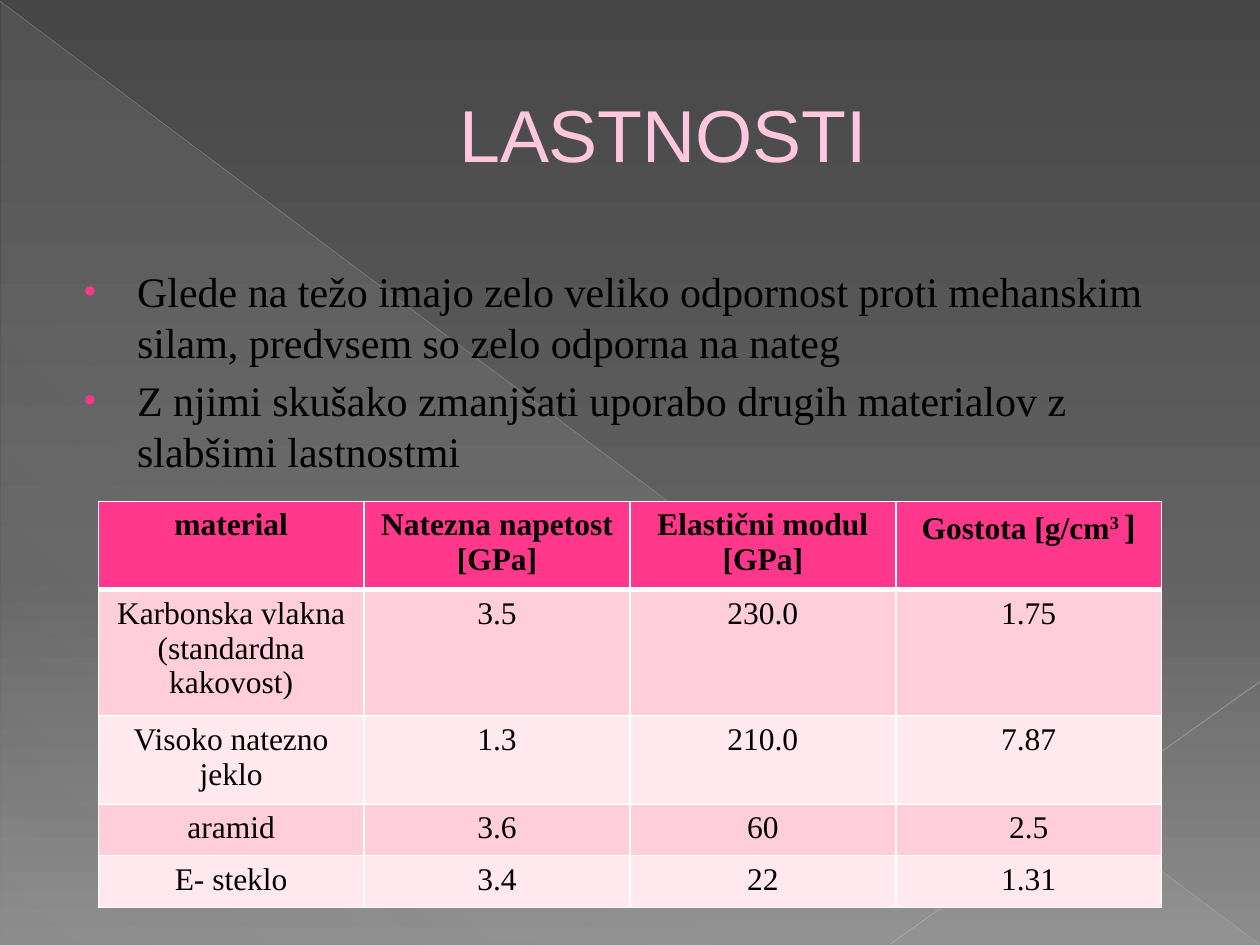
from lxml import etree
from pptx import Presentation
from pptx.dml.color import RGBColor as RGB
from pptx.enum.shapes import MSO_CONNECTOR as Conn, MSO_SHAPE as Kind
from pptx.enum.text import MSO_ANCHOR as Anchor, PP_ALIGN as Align
from pptx.oxml.ns import qn
from pptx.util import Inches, Pt

PINK = RGB(0xFF, 0x38, 0x8C)
PALE = RGB(0xFF, 0xC7, 0xDD)
PLUM = RGB(0xB1, 0x27, 0x61)
ROSE = RGB(0xFF, 0xCE, 0xDA)
BLUSH = RGB(0xFF, 0xE8, 0xEE)
WHITE = RGB(0xFF, 0xFF, 0xFF)
BLACK = RGB(0, 0, 0)
DARK = RGB(0x47, 0x47, 0x47)
GREY = RGB(0x62, 0x62, 0x62)
LIGHT = RGB(0x8C, 0x8C, 0x8C)
MIST = RGB(0xD2, 0xD2, 0xD2)
LONG = RGB(0xBF, 0xBF, 0xBF)
SHORT = RGB(0xC6, 0xC6, 0xC6)

BODY = {"name": "Times New Roman", "size": Pt(24)}
CELL = {"name": "Times New Roman", "size": Pt(18), "bold": False}
HEAD = {**CELL, "bold": True}
BIG = {**HEAD, "size": Pt(20)}
TITLE = {"name": "Arial", "size": Pt(42)}

POINTS = [
    "Glede na težo imajo zelo veliko odpornost proti mehanskim silam, "
    "predvsem so zelo odporna na nateg",
    "Z njimi skušako zmanjšati uporabo drugih materialov z slabšimi lastnostmi",
]
# The last heading is made of runs: text, format, baseline
DENSITY = [("Gostota [g/cm", HEAD, 0), ("3", HEAD, 30), (" ", BIG, 30), ("]", BIG, 0)]
ROWS = [
    ["material", "Natezna napetost [GPa]", "Elastični modul [GPa]", DENSITY],
    ["Karbonska vlakna (standardna kakovost)", "3.5", "230.0", "1.75"],
    ["Visoko natezno jeklo", "1.3", "210.0", "7.87"],
    ["aramid", "3.6", "60", "2.5"],
    ["E- steklo", "3.4", "22", "1.31"],
]
HEIGHTS = [0.7, 1, 0.7, 0.41, 0.41]


def add_xml(parent, tag, **attrs):
    return etree.SubElement(parent, qn(tag), {k: str(v) for k, v in attrs.items()})


def add_alpha(parent, pct):
    add_xml(parent, "a:alpha", val=pct * 1000)


def add_solid(parent, color):
    add_xml(add_xml(parent, "a:solidFill"), "a:srgbClr", val=color)


def set_grad(props, stops, angle):
    """Swap the solid fill of props for a gradient of (place, colour, alpha)."""
    old = props.find(qn("a:solidFill"))
    grad = etree.Element(qn("a:gradFill"), rotWithShape="1")
    spots = add_xml(grad, "a:gsLst")
    for pos, color, alpha in stops:
        spot = add_xml(spots, "a:gs", pos=pos * 1000)
        add_alpha(add_xml(spot, "a:srgbClr", val=color), alpha)
    add_xml(grad, "a:lin", ang=angle * 60000, scaled=0)
    props.replace(old, grad)


def add_run(para, text, style, color, base=0):
    run = para.add_run()
    run.text = text
    for key, val in style.items():
        setattr(run.font, key, val)
    run.font.color.rgb = color
    if base:
        run._r.get_or_add_rPr().set("baseline", str(base * 1000))
    return run


def add_frame(slide, box):
    frame = slide.shapes.add_textbox(*map(Inches, box)).text_frame
    frame.word_wrap = True
    return frame


def add_line(slide, start, end, color, width, alpha):
    line = slide.shapes.add_connector(Conn.STRAIGHT, *map(Inches, start + end))
    line.line.width = Pt(width)
    line.line.color.rgb = color
    props = line._element.spPr
    add_alpha(props.find(".//" + qn("a:srgbClr")), alpha)
    add_xml(props, "a:effectLst")


def draw_back(slide, box):
    x, y, w, h = box
    # Grey backdrop
    slide.background.fill.solid()
    back = slide._element.find(".//" + qn("p:bgPr"))
    set_grad(back, [(0, DARK, 100), (60, GREY, 100), (100, LIGHT, 100)], 90)
    # Sheer triangle
    tri = slide.shapes.add_shape(
        Kind.RIGHT_TRIANGLE, *map(Inches, (x + 0.01, y + 0.02, w - 0.01, h - 0.02)))
    tri.shadow.inherit = False
    tri.fill.solid()
    tri.line.fill.background()
    set_grad(tri._element.spPr, [(0, MIST, 10), (70, MIST, 8), (100, MIST, 1)], 133)
    # Diagonal lines
    add_line(slide, (x, y + 0.01), (x + w - 0.01, y + h - 0.01), LONG, 0.39, 35)
    add_line(slide, (x + w, y + 5.41), (x + 7.07, y + h - 0.01), SHORT, 0.47, 45)


def draw_title(slide, box):
    frame = add_frame(slide, box)
    frame.vertical_anchor = Anchor.MIDDLE
    para = frame.paragraphs[0]
    para.alignment = Align.CENTER
    para._p.get_or_add_pPr().set("marL", str(Inches(0.53)))
    run = add_run(para, "LASTNOSTI", TITLE, PALE)
    edge = etree.Element(qn("a:ln"), w=str(Pt(0.5)))
    add_solid(edge, PLUM)
    run._r.get_or_add_rPr().insert(0, edge)


def draw_points(slide, box):
    frame = add_frame(slide, box)
    for i, text in enumerate(POINTS):
        para = frame.add_paragraph() if i else frame.paragraphs[0]
        para.space_before = Pt(4.8)
        props = para._p.get_or_add_pPr()
        props.set("marL", str(Inches(0.49)))
        props.set("indent", str(Inches(-0.42)))
        add_xml(add_xml(props, "a:buClr"), "a:srgbClr", val=PINK)
        add_xml(props, "a:buSzPct", val=80000)
        add_xml(props, "a:buFont", typeface="Arial")
        add_xml(props, "a:buChar", char="•")
        add_run(para, text, BODY, BLACK)


def draw_cell(cell, data, row):
    # Borders come before the fill; the rule under the heading is thick
    props = cell._tc.get_or_add_tcPr()
    thick = {"L": 1, "R": 1, "T": 3 if row == 1 else 1, "B": 1 if row else 3}
    for side, width in thick.items():
        add_solid(add_xml(props, "a:ln" + side, w=Pt(width)), WHITE)
    cell.fill.solid()
    cell.fill.fore_color.rgb = (ROSE if row % 2 else BLUSH) if row else PINK
    para = cell.text_frame.paragraphs[0]
    para.alignment = Align.CENTER
    if isinstance(data, str):
        data = [(data, CELL if row else HEAD, 0)]
    for text, style, base in data:
        add_run(para, text, style, BLACK, base)


def draw_table(slide, box):
    size = len(ROWS), len(ROWS[0])
    table = slide.shapes.add_table(*size, *map(Inches, box)).table
    for col in table.columns:
        col.width = Inches(box[2] / size[1])
    for r, (height, cells) in enumerate(zip(HEIGHTS, ROWS)):
        table.rows[r].height = Inches(height)
        for c, data in enumerate(cells):
            draw_cell(table.cell(r, c), data, r)


def main():
    prs = Presentation()
    prs.slide_width, prs.slide_height = Inches(10), Inches(7.5)
    slide = prs.slides.add_slide(prs.slide_layouts[6])
    draw_back(slide, (0, 0, 10, 7.5))
    draw_title(slide, (0.5, 0.29, 9, 1.53))
    draw_points(slide, (0.5, 2.06, 9, 5))
    draw_table(slide, (0.78, 3.98, 8.44, 3.21))
    prs.save("out.pptx")


if __name__ == "__main__":
    main()
